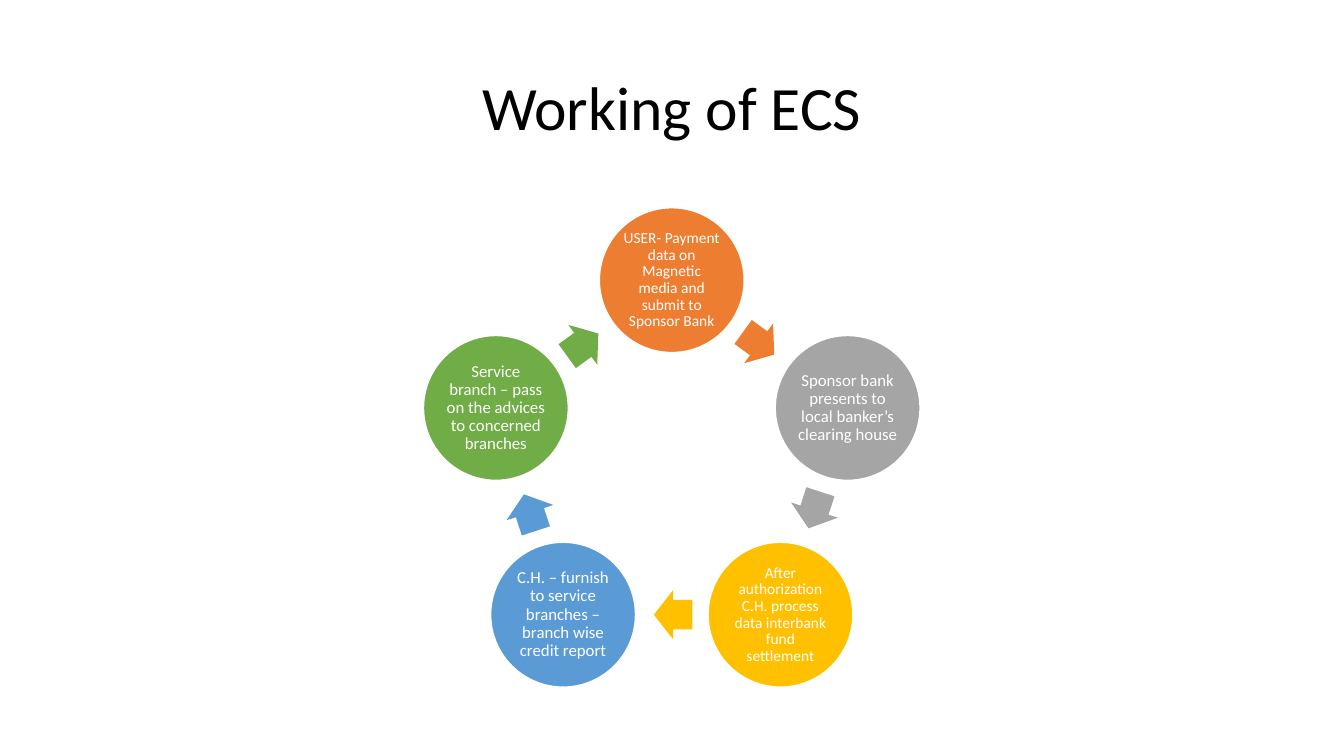
from math import cos, pi, radians, sin

from pptx import Presentation
from pptx.dml.color import RGBColor
from pptx.enum.shapes import MSO_SHAPE as SHAPE
from pptx.enum.text import MSO_ANCHOR as ANCHOR, MSO_AUTO_SIZE as AUTO_SIZE, PP_ALIGN as ALIGN
from pptx.util import Cm, Pt

BLACK = RGBColor(0x00, 0x00, 0x00)
WHITE = RGBColor(0xFF, 0xFF, 0xFF)
ORANGE = RGBColor(0xED, 0x7D, 0x31)
GRAY = RGBColor(0xA5, 0xA5, 0xA5)
GOLD = RGBColor(0xFF, 0xC0, 0x00)
BLUE = RGBColor(0x5B, 0x9B, 0xD5)
GREEN = RGBColor(0x70, 0xAD, 0x47)

# Ring geometry in centimetres
CENTER_X, CENTER_Y, RADIUS = 16.93, 11.72, 4.66
CIRCLE = 3.65
ARROW_W, ARROW_H = 0.97, 1.24
ARROW_LAG = 0.5  # degrees each arrow sits before the middle of its gap

STEPS = [
    ("USER- Payment data on Magnetic media and submit to Sponsor Bank", 11, ORANGE),
    ("Sponsor bank presents to local banker’s clearing house", 12, GRAY),
    ("After authorization C.H. process data interbank fund settlement", 11, GOLD),
    ("C.H. – furnish to service branches – branch wise credit report", 12, BLUE),
    ("Service branch – pass on the advices to concerned branches", 12, GREEN),
]
STEP_ANGLE = 360 / len(STEPS)
ARROW_RADIUS = RADIUS * cos(pi / len(STEPS))


def format_text(tf, text, size, color):
    tf.text = text
    tf.word_wrap = True
    tf.auto_size = AUTO_SIZE.NONE
    tf.vertical_anchor = ANCHOR.MIDDLE
    p = tf.paragraphs[0]
    p.alignment = ALIGN.CENTER
    p.line_spacing = 0.9
    p.font.name = "Calibri"
    p.font.size = Pt(size)
    p.font.color.rgb = color


def add_on_ring(kind, angle, radius, width, height, color):
    """Centre a filled shape on the ring, angle in degrees clockwise from the top."""
    x = CENTER_X + radius * sin(radians(angle))
    y = CENTER_Y - radius * cos(radians(angle))
    sp = slide.shapes.add_shape(
        kind, Cm(x - width / 2), Cm(y - height / 2), Cm(width), Cm(height))
    sp.shadow.inherit = False
    sp.fill.solid()
    sp.fill.fore_color.rgb = color
    return sp


prs = Presentation()
prs.slide_width, prs.slide_height = Cm(33.87), Cm(19.05)
slide = prs.slides.add_slide(prs.slide_layouts[5])

title = slide.shapes.title
title.left, title.top, title.width, title.height = Cm(2.33), Cm(0.94), Cm(29.21), Cm(3.68)
format_text(title.text_frame, "Working of ECS", 44, BLACK)

for i, (text, size, color) in enumerate(STEPS):
    angle = i * STEP_ANGLE
    circle = add_on_ring(SHAPE.OVAL, angle, RADIUS, CIRCLE, CIRCLE, color)
    circle.line.color.rgb = WHITE
    circle.line.width = Pt(1)
    tf = circle.text_frame
    tf.margin_left = tf.margin_right = tf.margin_top = tf.margin_bottom = Cm(0.04)
    format_text(tf, text, size, WHITE)

    gap_angle = angle + STEP_ANGLE / 2
    arrow = add_on_ring(SHAPE.RIGHT_ARROW, gap_angle - ARROW_LAG, ARROW_RADIUS,
                        ARROW_W, ARROW_H, color)
    arrow.line.fill.background()
    arrow.adjustments[0] = 0.6
    arrow.adjustments[1] = 0.5
    arrow.rotation = gap_angle

prs.save("out.pptx")
